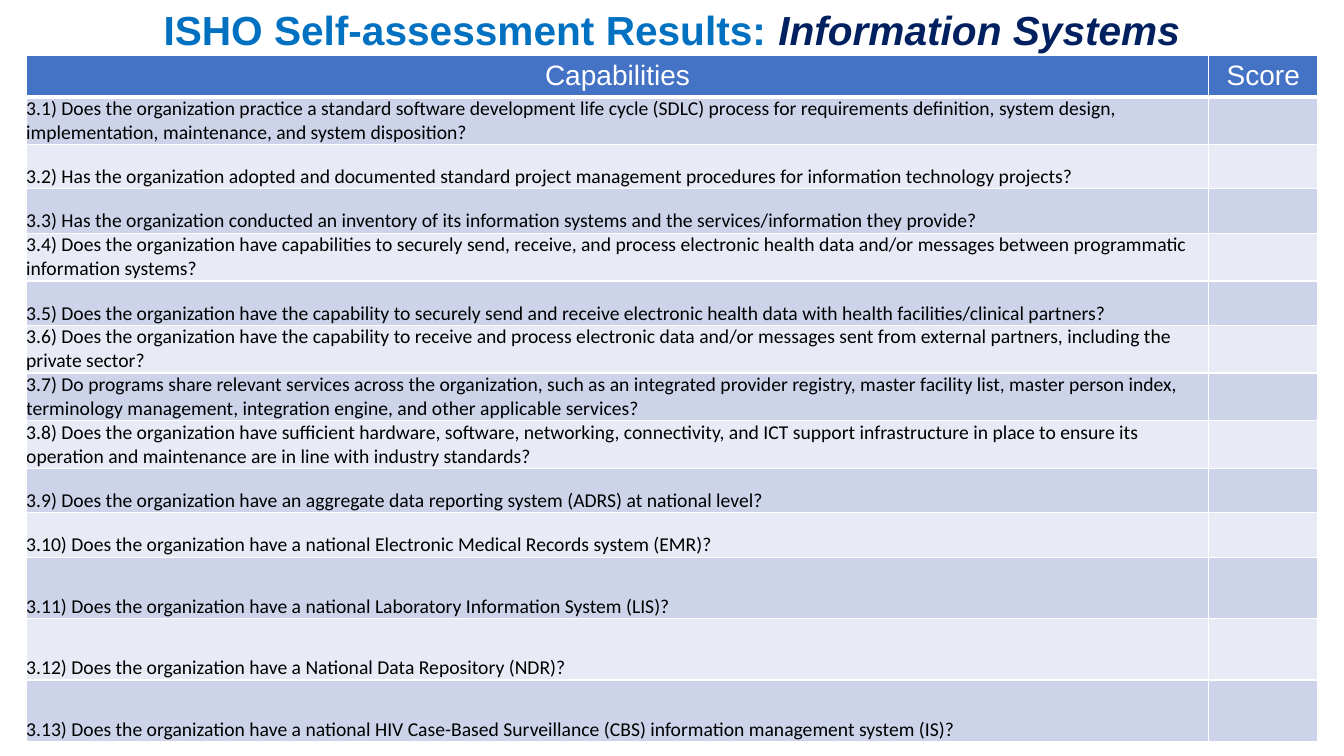
from lxml.etree import SubElement
from pptx import Presentation
from pptx.dml.color import RGBColor
from pptx.enum.text import MSO_ANCHOR, MSO_AUTO_SIZE, PP_ALIGN
from pptx.oxml.ns import qn
from pptx.util import Inches, Pt

ITEMS = [
    "Does the organization practice a standard software development life cycle (SDLC) process for "
    "requirements definition, system design, implementation, maintenance, and system disposition?",
    "Has the organization adopted and documented standard project management procedures for "
    "information technology projects?",
    "Has the organization conducted an inventory of its information systems and the "
    "services/information they provide?",
    "Does the organization have capabilities to securely send, receive, and process electronic "
    "health data and/or messages between programmatic information systems?",
    "Does the organization have the capability to securely send and receive electronic health data "
    "with health facilities/clinical partners?",
    "Does the organization have the capability to receive and process electronic data and/or "
    "messages sent from external partners, including the private sector?",
    "Do programs share relevant services across the organization, such as an integrated provider "
    "registry, master facility list, master person index, terminology management, integration "
    "engine, and other applicable services?",
    "Does the organization have sufficient hardware, software, networking, connectivity, and ICT "
    "support infrastructure in place to ensure its operation and maintenance are in line with "
    "industry standards?",
    "Does the organization have an aggregate data reporting system (ADRS) at national level?",
    "Does the organization have a national Electronic Medical Records system (EMR)?",
    "Does the organization have a national Laboratory Information System (LIS)?",
    "Does the organization have a National Data Repository (NDR)?",
    "Does the organization have a national HIV Case-Based Surveillance (CBS) information "
    "management system (IS)?",
]
WIDTHS = [11.73, 1.08]
HEIGHTS = [0.35] + [0.44] * 10 + [0.61] * 3


def tint(color):
    """Turn a hex string into a colour."""
    return RGBColor.from_string(color)


class Deck:
    """Hold the style and the current slide."""

    head, body = "Arial", "Calibri"
    blue, bands, rule = "4472C4", ("E8EBF5", "CDD4EA"), "FFFFFF"

    def __init__(self):
        """Start a deck with one title slide."""
        self.deck = Presentation()
        self.deck.slide_width, self.deck.slide_height = Inches(13.33), Inches(7.5)
        self.slide = self.deck.slides.add_slide(self.deck.slide_layouts[5])

    def text(self, para, words, size, face, color, bold=False, italic=False):
        """Add one styled run."""
        run = para.add_run()
        run.text = words
        font = run.font
        font.size, font.name, font.bold, font.italic = Pt(size), face, bold, italic
        font.color.rgb = tint(color)

    def title(self, *parts):
        """Place the title from (words, colour, italic) parts."""
        box = self.slide.shapes.title
        box.left, box.top = Inches(0), Inches(-0.43)
        box.width, box.height = Inches(13.33), Inches(1.45)
        frame = box.text_frame
        frame.auto_size = MSO_AUTO_SIZE.NONE
        frame.word_wrap = True
        frame.vertical_anchor = MSO_ANCHOR.MIDDLE
        para = frame.paragraphs[0]
        para.alignment = PP_ALIGN.CENTER
        for words, color, italic in parts:
            self.text(para, words, 29, self.head, color, True, italic)

    def edges(self, cell, top, bottom):
        """Draw the four borders of a cell."""
        props = cell._tc.get_or_add_tcPr()
        for side, width in (("L", 1), ("R", 1), ("T", top), ("B", bottom)):
            line = SubElement(props, qn(f"a:ln{side}"), w=str(Pt(width)))
            fill = SubElement(line, qn("a:solidFill"))
            SubElement(fill, qn("a:srgbClr"), val=self.rule)

    def table(self, heads, items):
        """Add the score table with its banded rows."""
        frame = self.slide.shapes.add_table(
            len(items) + 1, len(heads), Inches(0.26), Inches(0.55),
            Inches(sum(WIDTHS)), Inches(sum(HEIGHTS)))
        grid = frame.table
        for col, width in zip(grid.columns, WIDTHS):
            col.width = Inches(width)
        for num, (row, height) in enumerate(zip(grid.rows, HEIGHTS)):
            row.height = Inches(height)
            for cell in row.cells:
                self.edges(cell, 3 if num == 1 else 1, 1 if num else 3)
                cell.fill.solid()
                cell.fill.fore_color.rgb = tint(self.bands[num % 2] if num else self.blue)
        for col, words in enumerate(heads):
            cell = grid.cell(0, col)
            cell.vertical_anchor = MSO_ANCHOR.MIDDLE
            para = cell.text_frame.paragraphs[0]
            para.alignment = PP_ALIGN.CENTER
            self.text(para, words, 20, self.head, "FFFFFF")
        for num, words in enumerate(items, 1):
            cell = grid.cell(num, 0)
            cell.vertical_anchor = MSO_ANCHOR.BOTTOM
            cell.margin_left = cell.margin_right = Inches(0)
            cell.margin_top = cell.margin_bottom = Inches(0)
            para = cell.text_frame.paragraphs[0]
            self.text(para, f"3.{num}) {words}", 14, self.body, "000000")


def main():
    """Build and save the slide."""
    show = Deck()
    show.title(("ISHO Self-assessment Results: ", "0070C0", False),
               ("Information Systems", "002060", True))
    show.table(["Capabilities", "Score"], ITEMS)
    show.deck.save("out.pptx")


if __name__ == "__main__":
    main()
